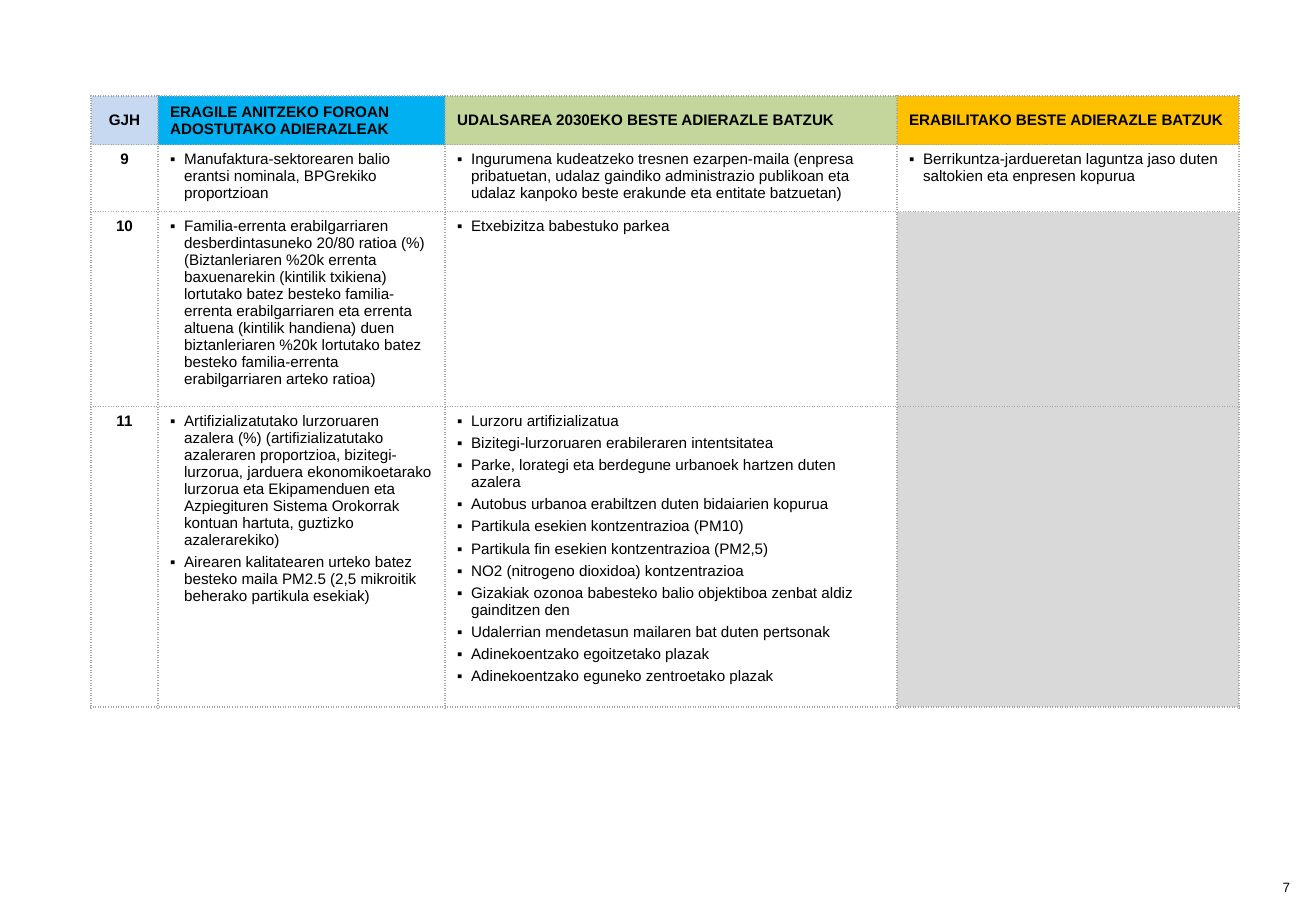
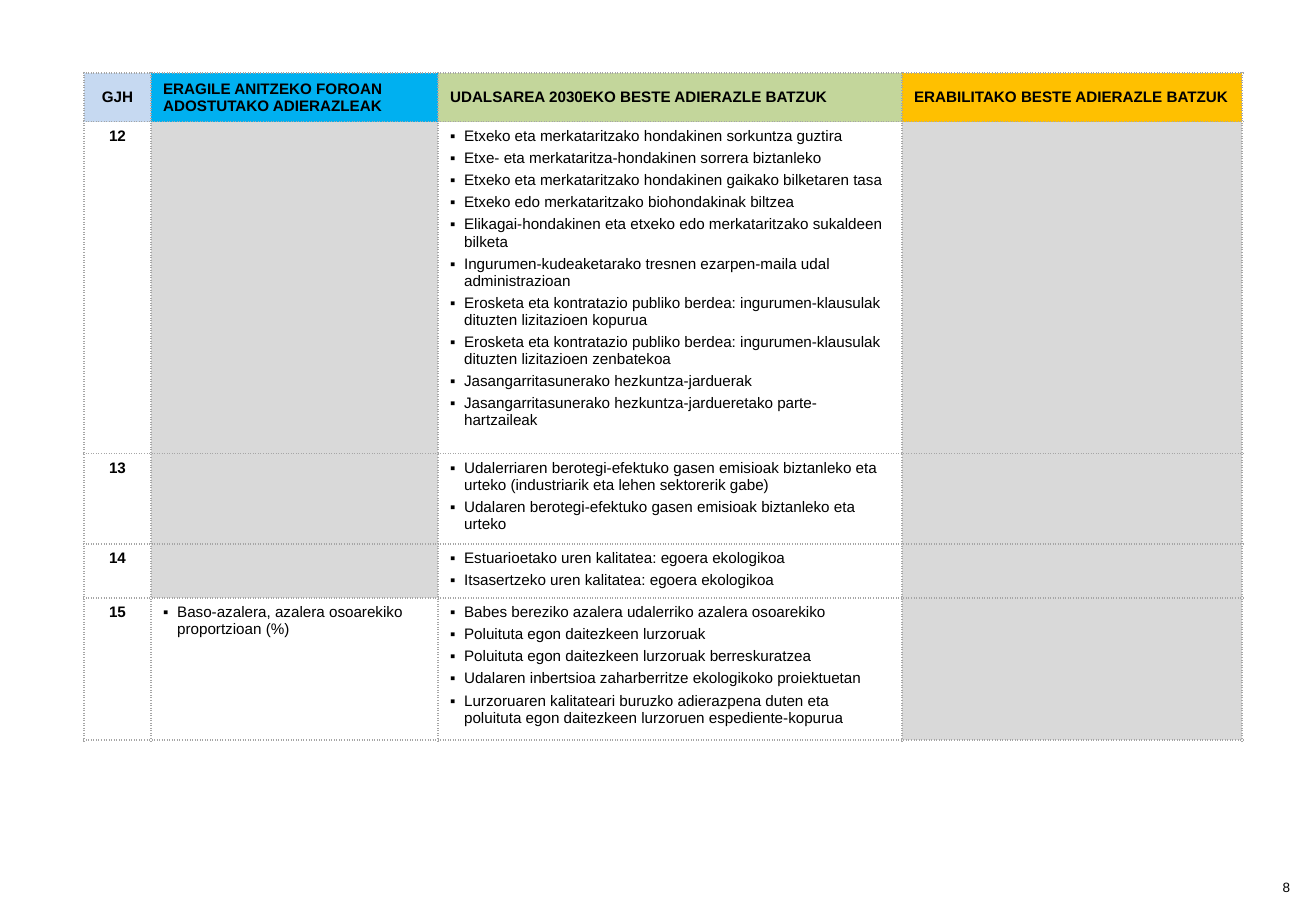
from dataclasses import dataclass

from lxml.etree import SubElement
from pptx import Presentation
from pptx.dml.color import RGBColor
from pptx.enum.text import MSO_ANCHOR, PP_ALIGN
from pptx.oxml.ns import qn
from pptx.slide import Slide
from pptx.table import _Cell
from pptx.text.text import _Paragraph
from pptx.util import Emu, Pt

PX_PER_INCH = 121.5
SLIDE_WIDTH, SLIDE_HEIGHT = 1316, 911
HEADER_HEIGHT = 46
BULLET_INDENT = 14

FONT = "Arial"
BLACK = RGBColor(0x00, 0x00, 0x00)
BORDER_GRAY = RGBColor(0xA6, 0xA6, 0xA6)
EMPTY_GRAY = RGBColor(0xD9, 0xD9, 0xD9)
PALE_BLUE = RGBColor(0xC6, 0xD9, 0xF1)
BLUE = RGBColor(0x00, 0xB0, 0xF0)
GREEN = RGBColor(0xC3, 0xD6, 0x9B)
AMBER = RGBColor(0xFF, 0xC0, 0x00)

HEADERS = (
    ("GJH", PALE_BLUE),
    ("ERAGILE ANITZEKO FOROAN ADOSTUTAKO ADIERAZLEAK", BLUE),
    ("UDALSAREA 2030EKO BESTE ADIERAZLE BATZUK", GREEN),
    ("ERABILITAKO BESTE ADIERAZLE BATZUK", AMBER),
)


@dataclass(frozen=True)
class Goal:
    number: int
    height: int
    forum: tuple[str, ...] = ()
    network: tuple[str, ...] = ()
    other: tuple[str, ...] = ()


@dataclass(frozen=True)
class IndicatorPage:
    number: int
    left: int
    top: int
    column_widths: tuple[int, ...]
    goals: tuple[Goal, ...]


PAGES = (
    IndicatorPage(7, 91, 96, (67, 287, 452, 342), (
        Goal(
            9, 63,
            forum=("Manufaktura-sektorearen balio erantsi nominala, BPGrekiko proportzioan",),
            network=(
                "Ingurumena kudeatzeko tresnen ezarpen-maila (enpresa pribatuetan, udalaz gaindiko "
                "administrazio publikoan eta udalaz kanpoko beste erakunde eta entitate batzuetan)",
            ),
            other=("Berrikuntza-jardueretan laguntza jaso duten saltokien eta enpresen kopurua",),
        ),
        Goal(
            10, 182,
            forum=(
                "Familia-errenta erabilgarriaren desberdintasuneko 20/80 ratioa (%) (Biztanleriaren "
                "%20k errenta baxuenarekin (kintilik txikiena) lortutako batez besteko familia-errenta "
                "erabilgarriaren eta errenta altuena (kintilik handiena) duen biztanleriaren %20k "
                "lortutako batez besteko familia-errenta erabilgarriaren arteko ratioa)",
            ),
            network=("Etxebizitza babestuko parkea",),
        ),
        Goal(
            11, 284,
            forum=(
                "Artifizializatutako lurzoruaren azalera (%) (artifizializatutako azaleraren "
                "proportzioa, bizitegi-lurzorua, jarduera ekonomikoetarako lurzorua eta Ekipamenduen "
                "eta Azpiegituren Sistema Orokorrak kontuan hartuta, guztizko azalerarekiko)",
                "Airearen kalitatearen urteko batez besteko maila PM2.5 (2,5 mikroitik beherako "
                "partikula esekiak)",
            ),
            network=(
                "Lurzoru artifizializatua",
                "Bizitegi-lurzoruaren erabileraren intentsitatea",
                "Parke, lorategi eta berdegune urbanoek hartzen duten azalera",
                "Autobus urbanoa erabiltzen duten bidaiarien kopurua",
                "Partikula esekien kontzentrazioa (PM10)",
                "Partikula fin esekien kontzentrazioa (PM2,5)",
                "NO2 (nitrogeno dioxidoa) kontzentrazioa",
                "Gizakiak ozonoa babesteko balio objektiboa zenbat aldiz gainditzen den",
                "Udalerrian mendetasun mailaren bat duten pertsonak",
                "Adinekoentzako egoitzetako plazak",
                "Adinekoentzako eguneko zentroetako plazak",
            ),
        ),
    )),
    IndicatorPage(8, 84, 73, (67, 287, 464, 340), (
        Goal(
            12, 313,
            network=(
                "Etxeko eta merkataritzako hondakinen sorkuntza guztira",
                "Etxe- eta merkataritza-hondakinen sorrera biztanleko",
                "Etxeko eta merkataritzako hondakinen gaikako bilketaren tasa",
                "Etxeko edo merkataritzako biohondakinak biltzea",
                "Elikagai-hondakinen eta etxeko edo merkataritzako sukaldeen bilketa",
                "Ingurumen-kudeaketarako tresnen ezarpen-maila udal administrazioan",
                "Erosketa eta kontratazio publiko berdea: ingurumen-klausulak dituzten lizitazioen kopurua",
                "Erosketa eta kontratazio publiko berdea: ingurumen-klausulak dituzten lizitazioen zenbatekoa",
                "Jasangarritasunerako hezkuntza-jarduerak",
                "Jasangarritasunerako hezkuntza-jardueretako parte-hartzaileak",
            ),
        ),
        Goal(
            13, 85,
            network=(
                "Udalerriaren berotegi-efektuko gasen emisioak biztanleko eta urteko "
                "(industriarik eta lehen sektorerik gabe)",
                "Udalaren berotegi-efektuko gasen emisioak biztanleko eta urteko",
            ),
        ),
        Goal(
            14, 52,
            network=(
                "Estuarioetako uren kalitatea: egoera ekologikoa",
                "Itsasertzeko uren kalitatea: egoera ekologikoa",
            ),
        ),
        Goal(
            15, 134,
            forum=("Baso-azalera, azalera osoarekiko proportzioan (%)",),
            network=(
                "Babes bereziko azalera udalerriko azalera osoarekiko",
                "Poluituta egon daitezkeen lurzoruak",
                "Poluituta egon daitezkeen lurzoruak berreskuratzea",
                "Udalaren inbertsioa zaharberritze ekologikoko proiektuetan",
                "Lurzoruaren kalitateari buruzko adierazpena duten eta poluituta egon daitezkeen "
                "lurzoruen espediente-kopurua",
            ),
        ),
    )),
)


def px(length: int) -> Emu:
    return Emu(round(length * 914400 / PX_PER_INCH))


def style_text(paragraph: _Paragraph, size: int = 9, bold: bool = False, centered: bool = False) -> None:
    paragraph.alignment = PP_ALIGN.CENTER if centered else PP_ALIGN.LEFT
    paragraph.font.name = FONT
    paragraph.font.size = Pt(size)
    paragraph.font.bold = bold
    paragraph.font.color.rgb = BLACK


def add_bullet(paragraph: _Paragraph) -> None:
    paragraph.space_after = Pt(3)
    properties = paragraph._p.get_or_add_pPr()
    properties.set("marL", str(px(BULLET_INDENT)))
    properties.set("indent", str(-px(BULLET_INDENT)))
    color = SubElement(properties, qn("a:buClr"))
    SubElement(color, qn("a:srgbClr"), val=str(BLACK))
    SubElement(properties, qn("a:buFont"), typeface=FONT)
    SubElement(properties, qn("a:buChar"), char="▪")


def format_cell(cell: _Cell, fill: RGBColor | None = None) -> None:
    properties = cell._tc.get_or_add_tcPr()
    for side in ("lnL", "lnR", "lnT", "lnB"):
        border = SubElement(properties, qn(f"a:{side}"), w=str(Pt(0.96)))
        color = SubElement(border, qn("a:solidFill"))
        SubElement(color, qn("a:srgbClr"), val=str(BORDER_GRAY))
        SubElement(border, qn("a:prstDash"), val="sysDot")
    if fill is None:
        cell.fill.background()
    else:
        cell.fill.solid()
        cell.fill.fore_color.rgb = fill


def write_label(cell: _Cell, label: str, centered: bool, fill: RGBColor | None = None) -> None:
    format_cell(cell, fill)
    cell.text = label
    style_text(cell.text_frame.paragraphs[0], bold=True, centered=centered)


def write_indicators(cell: _Cell, indicators: tuple[str, ...]) -> None:
    format_cell(cell, None if indicators else EMPTY_GRAY)
    cell.text = "\n".join(indicators)
    for paragraph in cell.text_frame.paragraphs:
        if indicators:
            add_bullet(paragraph)
        style_text(paragraph)


def add_page_number(slide: Slide, number: int) -> None:
    frame = slide.shapes.add_textbox(px(1258), px(876), px(57), px(23)).text_frame
    frame.word_wrap = True
    frame.vertical_anchor = MSO_ANCHOR.MIDDLE
    frame.text = str(number)
    style_text(frame.paragraphs[0], size=8, centered=True)


def add_indicator_table(slide: Slide, page: IndicatorPage) -> None:
    heights = (HEADER_HEIGHT, *(goal.height for goal in page.goals))
    table = slide.shapes.add_table(
        len(heights), len(HEADERS), px(page.left), px(page.top),
        px(sum(page.column_widths)), px(sum(heights)),
    ).table
    table.first_row = False
    table.horz_banding = False
    for column, width in zip(table.columns, page.column_widths):
        column.width = px(width)
    for row, height in zip(table.rows, heights):
        row.height = px(height)
    for index, (label, fill) in enumerate(HEADERS):
        header = table.cell(0, index)
        write_label(header, label, index == 0, fill)
        header.vertical_anchor = MSO_ANCHOR.MIDDLE
    for row, goal in enumerate(page.goals, start=1):
        write_label(table.cell(row, 0), str(goal.number), True)
        for column, indicators in enumerate((goal.forum, goal.network, goal.other), start=1):
            write_indicators(table.cell(row, column), indicators)


def main() -> None:
    presentation = Presentation()
    presentation.slide_width = px(SLIDE_WIDTH)
    presentation.slide_height = px(SLIDE_HEIGHT)
    blank_layout = presentation.slide_layouts[6]
    for page in PAGES:
        slide = presentation.slides.add_slide(blank_layout)
        add_page_number(slide, page.number)
        add_indicator_table(slide, page)
    presentation.save("out.pptx")


if __name__ == "__main__":
    main()
